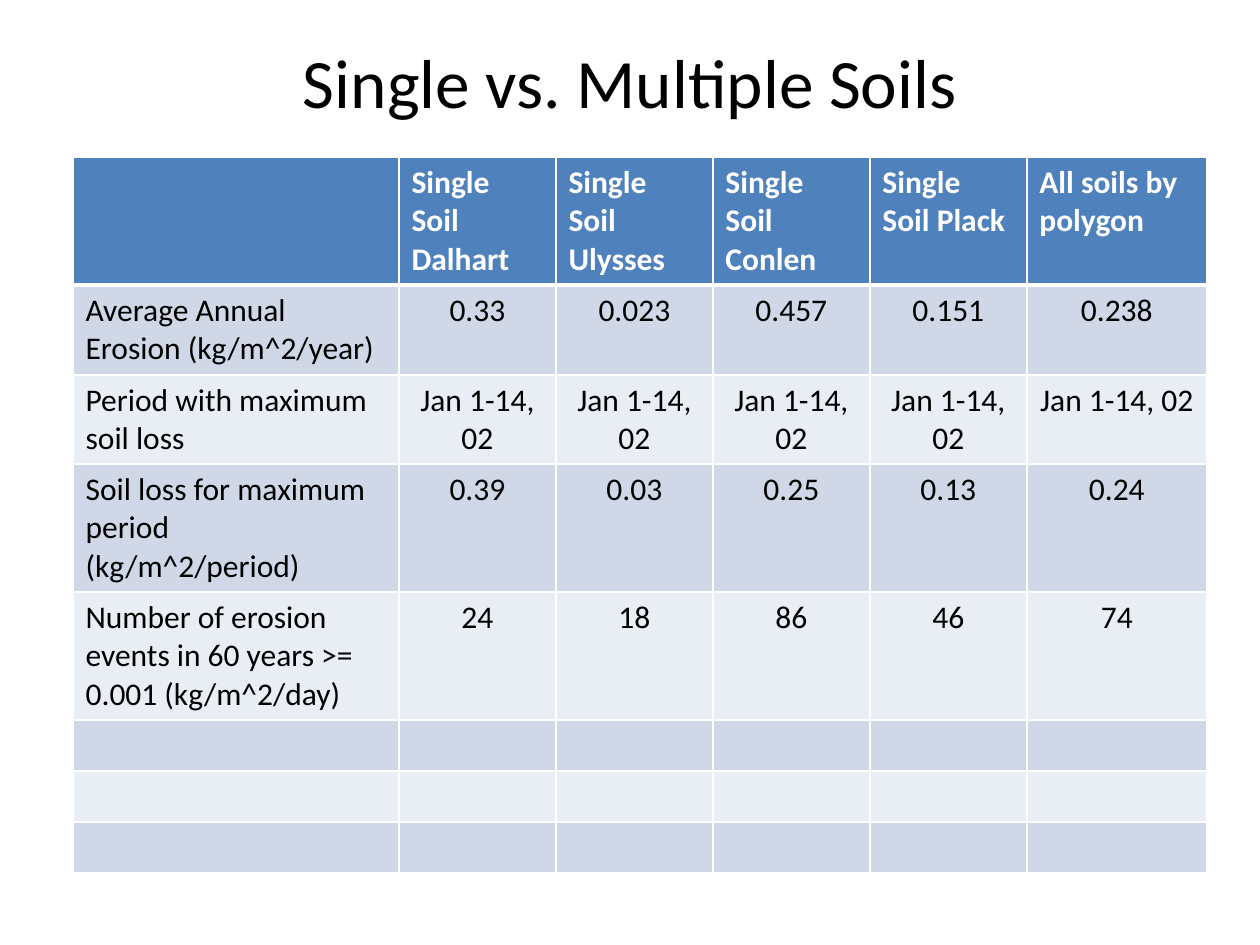
"""Build a slide with a table comparing erosion for single and multiple soils."""
from lxml.etree import SubElement
from pptx import Presentation
from pptx.dml.color import RGBColor
from pptx.enum.text import MSO_ANCHOR, PP_ALIGN
from pptx.oxml.ns import qn
from pptx.util import Emu, Pt

PX = 914400 // 126


def color(value):
    return RGBColor.from_string(value)


def add_border(cell, side, points):
    line = SubElement(cell._tc.get_or_add_tcPr(), qn(f"a:ln{side}"), w=str(Pt(points)))
    fill = SubElement(line, qn("a:solidFill"))
    SubElement(fill, qn("a:srgbClr"), val="FFFFFF")


column_widths = [326] + [157] * 4 + [180]
row_heights = [128, 90, 89, 128, 128] + [51] * 3
soil_rows = [
    ["", "Single Soil Dalhart", "Single Soil Ulysses", "Single Soil Conlen",
     "Single Soil Plack", "All soils by polygon"],
    ["Average Annual Erosion (kg/m^2/year)", "0.33", "0.023", "0.457", "0.151", "0.238"],
    ["Period with maximum soil loss"] + ["Jan 1-14, 02"] * 5,
    ["Soil loss for maximum period (kg/m^2/period)", "0.39", "0.03", "0.25", "0.13", "0.24"],
    ["Number of erosion events in 60 years >= 0.001 (kg/m^2/day)",
     "24", "18", "86", "46", "74"],
] + [[""] * 6] * 3

prs = Presentation()
prs.slide_width = Emu(1260 * PX)
prs.slide_height = Emu(945 * PX)
slide = prs.slides.add_slide(prs.slide_layouts[6])

title = slide.shapes.add_textbox(63 * PX, 32 * PX, 1134 * PX, 98 * PX).text_frame
title.word_wrap = True
title.vertical_anchor = MSO_ANCHOR.MIDDLE
heading = title.paragraphs[0]
heading.text = "Single vs. Multiple Soils"
heading.alignment = PP_ALIGN.CENTER
heading.font.size = Pt(39.6)
heading.font.name = "Calibri"
heading.font.color.rgb = color("000000")

soils = slide.shapes.add_table(
    len(soil_rows), len(column_widths), 73 * PX, 157 * PX,
    sum(column_widths) * PX, sum(row_heights) * PX).table
for column, width in zip(soils.columns, column_widths):
    column.width = Emu(width * PX)
for row, height in zip(soils.rows, row_heights):
    row.height = Emu(height * PX)

for r, values in enumerate(soil_rows):
    is_header = r == 0
    band = "4F81BD" if is_header else ("E9EDF4", "D0D8E8")[r % 2]
    for c, value in enumerate(values):
        cell = soils.cell(r, c)
        for side in "LRTB":
            under_header = (r, side) in [(0, "B"), (1, "T")]
            add_border(cell, side, 3 if under_header else 1)
        cell.fill.solid()
        cell.fill.fore_color.rgb = color(band)
        entry = cell.text_frame.paragraphs[0]
        entry.text = value
        entry.alignment = PP_ALIGN.LEFT if is_header or c == 0 else PP_ALIGN.CENTER
        entry.font.size = Pt(18)
        entry.font.name = "Calibri"
        entry.font.bold = is_header
        entry.font.color.rgb = color("FFFFFF" if is_header else "000000")

prs.save("out.pptx")
